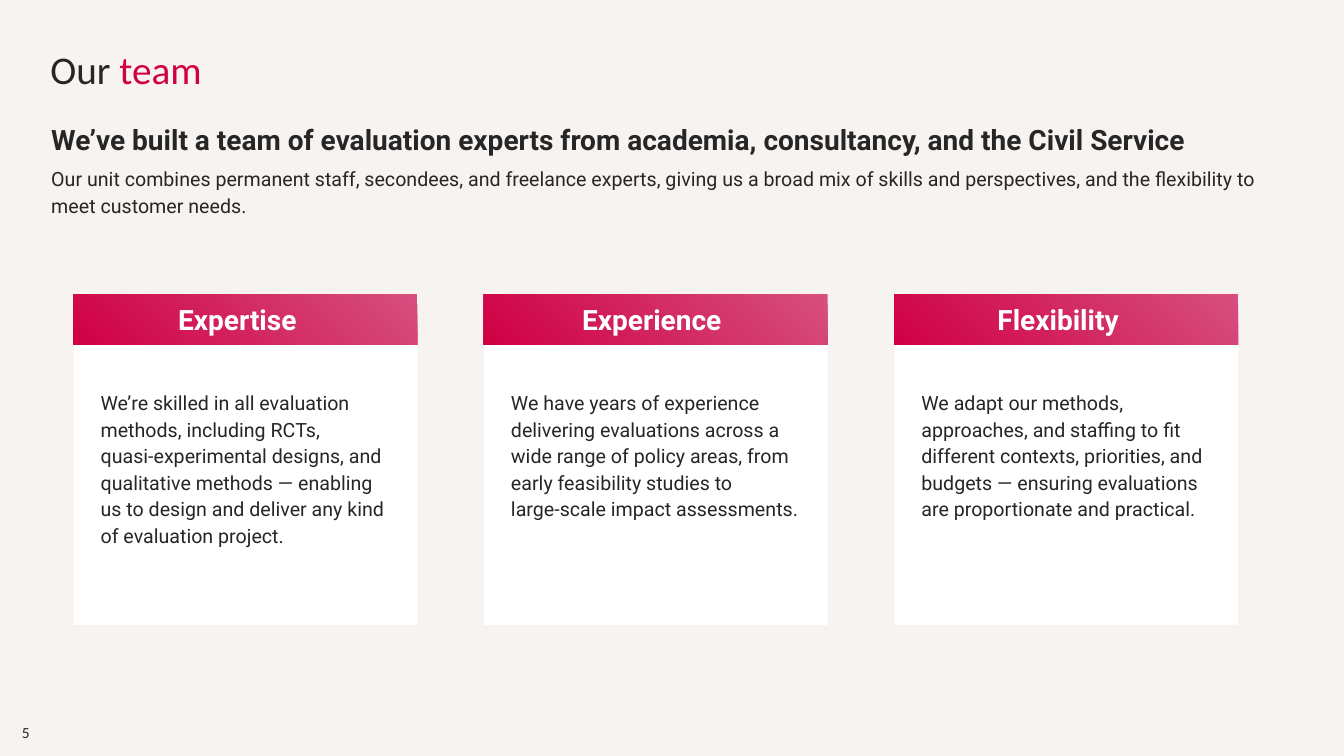
from pptx import Presentation
from pptx.dml.color import RGBColor
from pptx.enum.shapes import MSO_SHAPE
from pptx.enum.text import MSO_ANCHOR, PP_ALIGN
from pptx.util import Inches, Pt

RECTANGLE = MSO_SHAPE.RECTANGLE
TOP, MIDDLE = MSO_ANCHOR.TOP, MSO_ANCHOR.MIDDLE
LEFT, CENTER = PP_ALIGN.LEFT, PP_ALIGN.CENTER

COLORS = {
    "background": "F7F3F1",
    "ink": "262626",
    "accent": "D00045",
    "accent_light": "D64F7E",
    "white": "FFFFFF",
}
HEADING_FONT, BODY_FONT = "Calibri", "Roboto"

# Heading, left offset of its label within the card, and lines of the body
CARDS = [
    ("Expertise", 0.71, [
        "We’re skilled in all evaluation methods, including RCTs,",
        "quasi-experimental designs, and qualitative methods — enabling us to "
        "design and deliver any kind of evaluation project."]),
    ("Experience", 0.75, [
        "We have years of experience delivering evaluations across a wide range "
        "of policy areas, from early feasibility studies to",
        "large-scale impact assessments."]),
    ("Flexibility", 0.71, [
        "We adapt our methods, approaches, and staffing to fit different contexts, "
        "priorities, and budgets — ensuring evaluations are proportionate and "
        "practical."]),
]
CARD_LEFT, CARD_TOP, CARD_PITCH = 0.73, 2.92, 4.07
CARD_WIDTH, CARD_HEIGHT, HEADER_HEIGHT = 3.41, 3.28, 0.5


def rgb(name):
    return RGBColor.from_string(COLORS[name])


def add_text_frame(slide, box, anchor=TOP, inset=True):
    text_box = slide.shapes.add_textbox(*(Inches(value) for value in box))
    frame = text_box.text_frame
    frame.word_wrap = True
    frame.vertical_anchor = anchor
    if not inset:
        frame.margin_left = frame.margin_right = 0
        frame.margin_top = frame.margin_bottom = 0
    return frame


def format_paragraph(paragraph, alignment=LEFT, line_spacing=1.13, space_after=6):
    paragraph.alignment = alignment
    paragraph.line_spacing = line_spacing
    paragraph.space_after = Pt(space_after)


def add_run(paragraph, text, size, color="ink", font=BODY_FONT, bold=False):
    run = paragraph.add_run()
    run.text = text
    run.font.name = font
    run.font.size = Pt(size)
    run.font.bold = bold
    run.font.color.rgb = rgb(color)


def add_rectangle(slide, left, top, width, height):
    shape = slide.shapes.add_shape(
        RECTANGLE, Inches(left), Inches(top), Inches(width), Inches(height))
    shape.shadow.inherit = False
    shape.line.fill.background()
    return shape


def add_title(slide, box):
    paragraph = add_text_frame(slide, box, inset=False).paragraphs[0]
    format_paragraph(paragraph, line_spacing=0.9, space_after=0)
    add_run(paragraph, "Our ", 28, font=HEADING_FONT)
    add_run(paragraph, "team", 28, "accent", HEADING_FONT)


def add_introduction(slide, box):
    frame = add_text_frame(slide, box)
    headline, summary = frame.paragraphs[0], frame.add_paragraph()
    format_paragraph(headline)
    add_run(headline, "We’ve built a team of evaluation experts from academia, "
            "consultancy, and the Civil Service", 20, bold=True)
    format_paragraph(summary)
    add_run(summary, "Our unit combines permanent staff, secondees, and freelance "
            "experts, giving us a broad mix of skills and perspectives, and the "
            "flexibility to meet customer needs.", 14)


def add_card(slide, box, heading, label_offset, lines):
    left, top, width, height = box

    # White panel
    panel = add_rectangle(slide, left, top, width, height)
    panel.fill.solid()
    panel.fill.fore_color.rgb = rgb("white")

    # Gradient header, light at the top right
    header = add_rectangle(slide, left, top, width, HEADER_HEIGHT)
    header.fill.gradient()
    header.fill.gradient_angle = 225
    for stop, color in zip(header.fill.gradient_stops, ("accent_light", "accent")):
        stop.color.rgb = rgb(color)

    # Header label
    label_box = (left + label_offset, top + 0.03, 1.83, 0.44)
    label = add_text_frame(slide, label_box).paragraphs[0]
    format_paragraph(label, CENTER, line_spacing=1.0, space_after=0)
    add_run(label, heading, 20, "white", bold=True)

    # Body
    body = add_text_frame(slide, (left + 0.17, top + 0.88, 3.07, 1.7)).paragraphs[0]
    format_paragraph(body)
    for index, line in enumerate(lines):
        if index:
            body.add_line_break()
        add_run(body, line, 14)


def add_page_number(slide, box):
    paragraph = add_text_frame(slide, box, MIDDLE, inset=False).paragraphs[0]
    format_paragraph(paragraph, CENTER, line_spacing=1.0, space_after=0)
    add_run(paragraph, "5", 11, font=HEADING_FONT)


def add_team_slide(presentation):
    slide = presentation.slides.add_slide(presentation.slide_layouts[6])
    slide.background.fill.solid()
    slide.background.fill.fore_color.rgb = rgb("background")

    add_title(slide, (0.5, 0.5, 12.33, 0.47))
    add_introduction(slide, (0.41, 1.12, 12.19, 1.08))
    for index, card in enumerate(CARDS):
        left = CARD_LEFT + index * CARD_PITCH
        add_card(slide, (left, CARD_TOP, CARD_WIDTH, CARD_HEIGHT), *card)
    add_page_number(slide, (0.09, 7.16, 0.33, 0.21))


def main():
    presentation = Presentation()
    presentation.slide_width = Inches(13.33)
    presentation.slide_height = Inches(7.5)
    add_team_slide(presentation)
    presentation.save("out.pptx")


if __name__ == "__main__":
    main()
